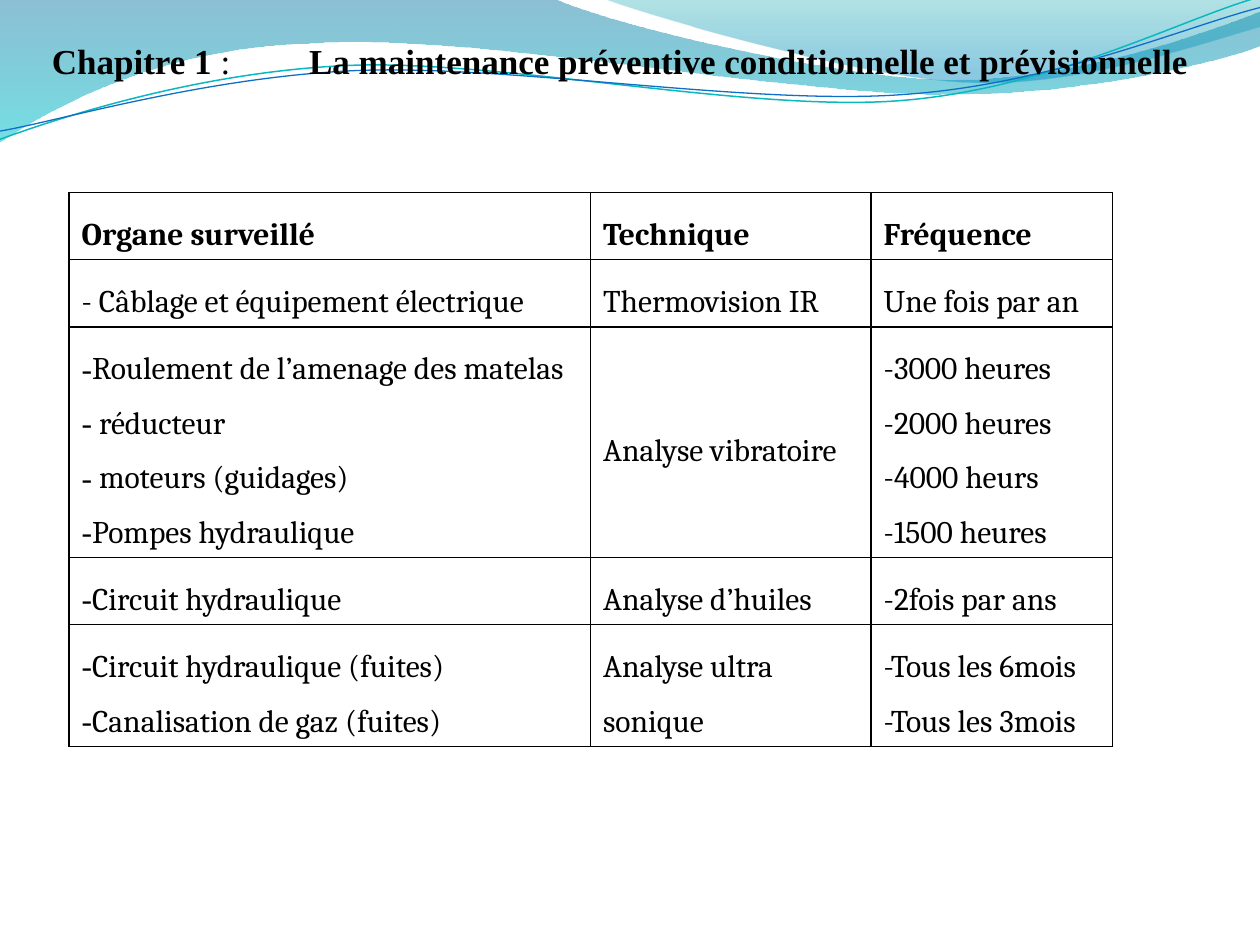
import pptx
import pptx.dml.color
import pptx.enum.text
import pptx.oxml.ns
import pptx.util
from lxml import etree

Pt = pptx.util.Pt
SCALE = 100  # freeform units per point
BLACK = "000000"

# Each outline: start point, then 2-value line ends or 6-value Bézier segments.
WIDE_WAVE = [
    (0, 0), (316.8, -0.7),
    (342.7, 12.2, 478.1, 45.4, 545.8, 45.4),
    (614.2, 45.4, 689.8, 18.7, 720, 6.5),
    (720.7, 25.9),
    (707.8, 31.7, 626.4, 54.7, 537.1, 54),
    (447.8, 54, 275, 20.2, 185, 24.5),
    (92.9, 25.9, 33.1, 59.8, -0.7, 81.4),
]
RIGHT_WAVE = [
    (344.9, -0.7),
    (366.5, 7.9, 491, 44.6, 553.7, 46.8),
    (616.3, 49.7, 691.9, 23, 720, 15.1),
    (720, 0),
]
TEAL_CURVE = [
    (0, 79.6),
    (34.6, 67, 113.8, 41, 199.4, 37.4),
    (284.4, 33.8, 427, 64.1, 513.4, 57.6),
    (599.8, 51.1, 675.4, 10.8, 718.6, -1.4),
]
BLUE_CURVE = [
    (0, 74.9),
    (33.8, 69.1, 118.1, 43.9, 203.8, 40.3),
    (290.2, 36.7, 430.6, 60.5, 516.2, 54),
    (601.9, 48.2, 677.5, 15.1, 720, 4.3),
]

HEADINGS = ["Organe surveillé", "Technique", "Fréquence"]
PLAIN_ROW = ["- Câblage et équipement électrique", "Thermovision IR", "Une fois par an"]
BULLETED_ROWS = [
    ["Roulement de l’amenage des matelas\n réducteur\n moteurs (guidages)\nPompes hydraulique",
     "Analyse vibratoire",
     "-3000 heures\n-2000 heures\n-4000 heurs\n-1500 heures"],
    ["Circuit hydraulique", "Analyse d’huiles", "-2fois par ans"],
    ["Circuit hydraulique (fuites)\nCanalisation de gaz (fuites)",
     "Analyse ultra sonique",
     "-Tous les 6mois\n-Tous les 3mois"],
]


def color(hex_value):
    return pptx.dml.color.RGBColor.from_string(hex_value)


def add_element(parent, tag, **attributes):
    return etree.SubElement(parent, pptx.oxml.ns.qn(tag), attributes)


def add_run(paragraph, text, font, size, bold):
    run = paragraph.add_run()
    run.text = text
    run.font.name = font
    run.font.size = Pt(size)
    run.font.bold = bold
    run.font.color.rgb = color(BLACK)


def bend_segments(shape, outline):
    """Merge each three lines that stand for a Bézier segment into one curve."""
    lines = iter(list(shape.element.spPr.iter(pptx.oxml.ns.qn("a:lnTo"))))
    for segment in outline[1:]:
        first = next(lines)
        if len(segment) == 2:
            continue
        first.tag = pptx.oxml.ns.qn("a:cubicBezTo")
        for line in (next(lines), next(lines)):
            first.append(line[0])
            line.getparent().remove(line)


def add_outline(slide, left, top, outline, close):
    points = [(round((left + x) * SCALE), round((top + y) * SCALE))
              for segment in outline
              for x, y in zip(segment[::2], segment[1::2])]
    builder = slide.shapes.build_freeform(*points[0], scale=Pt(1) / SCALE)
    builder.add_line_segments(points[1:], close=close)
    shape = builder.convert_to_shape()
    bend_segments(shape, outline)
    shape.shadow.inherit = False
    return shape


def add_wave(slide, left, top, outline, stops):
    """Stops are (position, colour, opacity in percent), from top to bottom."""
    shape = add_outline(slide, left, top, outline, close=True)
    shape.line.fill.background()
    shape.fill.gradient()
    shape.fill.gradient_angle = 270
    for stop, (position, hex_value, opacity) in zip(shape.fill.gradient_stops, stops):
        stop.position = position
        stop.color.rgb = color(hex_value)
    tag = pptx.oxml.ns.qn("a:srgbClr")
    for element, (position, hex_value, opacity) in zip(shape.element.spPr.iter(tag), stops):
        add_element(element, "a:alpha", val=str(opacity * 1000))


def add_curve(slide, left, top, outline, hex_value, width):
    shape = add_outline(slide, left, top, outline, close=False)
    shape.fill.background()
    shape.line.color.rgb = color(hex_value)
    shape.line.width = Pt(width)


def add_banner(slide, left, top):
    add_wave(slide, left, top, WIDE_WAVE, [(0, "0074A1", 45), (1, "00C6CF", 55)])
    add_wave(slide, left, top, RIGHT_WAVE, [(0, "00A1A9", 30), (0.8, "008BBF", 45)])
    add_curve(slide, left, top, TEAL_CURVE, "0AB8BF", 0.85)
    add_curve(slide, left, top, BLUE_CURVE, "0F6FC6", 0.75)


def add_title(slide, left, top, width, height):
    frame = slide.shapes.add_textbox(Pt(left), Pt(top), Pt(width), Pt(height)).text_frame
    frame.word_wrap = True
    frame.auto_size = pptx.enum.text.MSO_AUTO_SIZE.SHAPE_TO_FIT_TEXT
    paragraph = frame.paragraphs[0]
    tabs = add_element(paragraph._p.get_or_add_pPr(), "a:tabLst")
    add_element(tabs, "a:tab", pos=str(Pt(147)), algn="l")
    for text, bold in [
        ("Chapitre 1", True),
        (" :\t", False),
        ("La maintenance préventive conditionnelle et prévisionnelle", True),
    ]:
        add_run(paragraph, text, "Times New Roman", 20, bold)


def set_borders(cell):
    properties = cell._tc.get_or_add_tcPr()
    for side in ("a:lnL", "a:lnR", "a:lnT", "a:lnB"):
        line = add_element(properties, side, w=str(Pt(1)))
        add_element(add_element(line, "a:solidFill"), "a:srgbClr", val=BLACK)


def add_bullet(paragraph):
    properties = paragraph._p.get_or_add_pPr()
    add_element(properties, "a:buFont", typeface="Times New Roman")
    add_element(properties, "a:buChar", char="-")


def fill_cell(cell, text, bold, bulleted, centred):
    set_borders(cell)
    cell.fill.background()
    if centred:
        cell.vertical_anchor = pptx.enum.text.MSO_ANCHOR.MIDDLE
    frame = cell.text_frame
    for index, line in enumerate(text.split("\n")):
        paragraph = frame.add_paragraph() if index else frame.paragraphs[0]
        paragraph.line_spacing = 1.5
        if bulleted:
            add_bullet(paragraph)
        add_run(paragraph, line, "Cambria", 18, bold)


def add_schedule(slide, left, top, column_widths, row_height):
    rows = [HEADINGS, PLAIN_ROW] + BULLETED_ROWS
    table = slide.shapes.add_table(
        len(rows), len(column_widths), Pt(left), Pt(top),
        Pt(sum(column_widths)), Pt(row_height * len(rows))).table
    table.first_row = False
    table.horz_banding = False
    for column, width in zip(table.columns, column_widths):
        column.width = Pt(width)
    for row_index, texts in enumerate(rows):
        grouped = row_index >= 2
        for column_index, text in enumerate(texts):
            fill_cell(table.cell(row_index, column_index), text,
                      bold=row_index == 0,
                      bulleted=grouped and column_index == 0,
                      centred=grouped and column_index == 1)


def main():
    presentation = pptx.Presentation()
    presentation.slide_width = Pt(720)
    presentation.slide_height = Pt(540)
    slide = presentation.slides.add_slide(presentation.slide_layouts[6])
    add_banner(slide, 0, 0)
    add_schedule(slide, 39.5, 110, [298, 160.3, 138], 29.5)
    add_title(slide, 22.5, 19.2, 675.4, 31.5)
    presentation.save("out.pptx")


if __name__ == "__main__":
    main()
